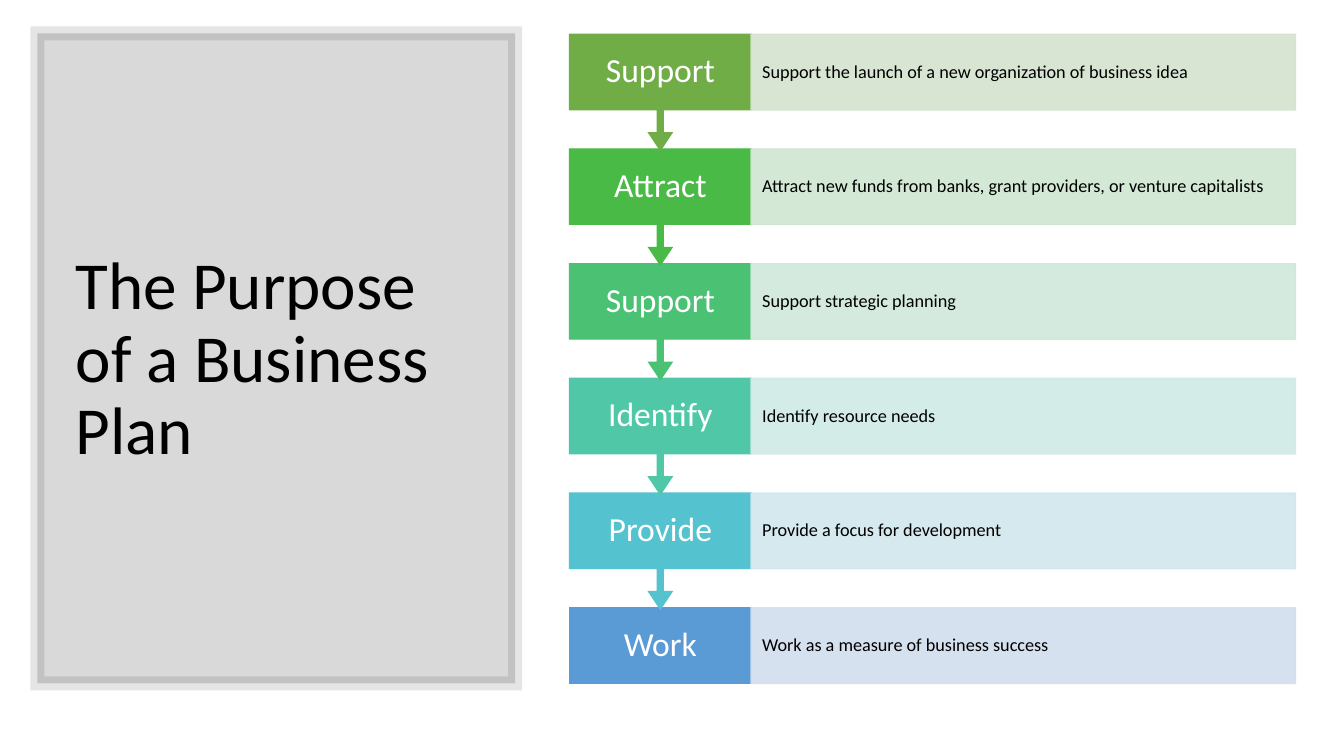
from lxml import etree
from pptx import Presentation
from pptx import util as u
from pptx.dml.color import RGBColor
from pptx.enum import shapes, text
from pptx.oxml.ns import qn

HUES = {"ink": "000000", "white": "FFFFFF"}
STEPS = [
    ("Support", "Support the launch of a new organization of business idea", "70AD47", "D5E3CF"),
    ("Attract", "Attract new funds from banks, grant providers, or venture capitalists", "4ABA46", "CFE6D1"),
    ("Support", "Support strategic planning", "4BC174", "D0E8DB"),
    ("Identify", "Identify resource needs", "50C8A7", "D0EBE6"),
    ("Provide", "Provide a focus for development", "55C3CF", "D1E7ED"),
    ("Work", "Work as a measure of business success", "5B9BD5", "D2DEEF"),
]


def block(kind, box, hue, width=1, clear=100, edge=100):
    """Add a shape with fill and line of one hue, at the given opacities."""
    shape = slide.shapes.add_shape(kind, *[u.Inches(n) for n in box])
    shape.shadow.inherit = False
    shape.fill.solid()
    shape.line.width = u.Pt(width)
    for fill, alpha in ((shape.fill, clear), (shape.line.fill, edge)):
        fill.solid()
        fill.fore_color.rgb = RGBColor.from_string(hue)
    for color, alpha in zip(shape.element.spPr.iter(qn("a:srgbClr")), (clear, edge)):
        if alpha < 100:
            etree.SubElement(color, qn("a:alpha"), val=str(alpha * 1000))
    etree.SubElement(shape.element.spPr.find(qn("a:ln")), qn("a:miter"), lim="800000")
    return shape


def write(shape, words, size, hue, align, inset):
    """Set one line of text, centred from top to bottom."""
    frame = shape.text_frame
    frame.text = words
    frame.word_wrap = True
    frame.auto_size = text.MSO_AUTO_SIZE.NONE
    frame.vertical_anchor = text.MSO_ANCHOR.MIDDLE
    frame.margin_left = frame.margin_right = u.Inches(inset)
    line = frame.paragraphs[0]
    line.alignment = align
    line.line_spacing = 0.9
    font = line.runs[0].font
    font.size = u.Pt(size)
    font.name = "Calibri"
    font.color.rgb = RGBColor.from_string(hue)


deck = Presentation()
deck.slide_width = u.Inches(13.33)
deck.slide_height = u.Inches(7.5)
slide = deck.slides.add_slide(deck.slide_layouts[5])
rect = shapes.MSO_SHAPE.RECTANGLE
left, center = text.PP_ALIGN.LEFT, text.PP_ALIGN.CENTER

# Title on a grey panel
title = slide.shapes.title
title.left, title.top = u.Inches(0.65), u.Inches(0.7)
title.width, title.height = u.Inches(4.16), u.Inches(5.75)
write(title, "The Purpose of a Business Plan", 48, HUES["ink"], left, 0.1)
panel = block(rect, (0.37, 0.33, 4.74, 6.45), HUES["ink"], 10, 15, 10)
title.element.addprevious(panel.element)

# Steps from the bottom up, so that each arrow lies over the next box
first, last = 0.34, 6.03
pitch = (last - first) / (len(STEPS) - 1)
for i, (verb, aim, dark, pale) in reversed(list(enumerate(STEPS))):
    top = first + i * pitch
    if i == len(STEPS) - 1:
        step = block(rect, (5.65, top, 1.8, 0.75), dark)
    else:
        step = block(shapes.MSO_SHAPE.DOWN_ARROW_CALLOUT, (5.65, top, 1.8, 1.15), dark)
        for n, part in enumerate((0.05, 0.1, 0.15, 0.65)):
            step.adjustments[n] = part
    write(step, verb, 24, HUES["white"], center, 0.13)
    bar = block(rect, (7.45, top, 5.4, 0.75), pale, 1, 90, 90)
    write(bar, aim, 13, HUES["ink"], left, 0.11)

deck.save("out.pptx")
